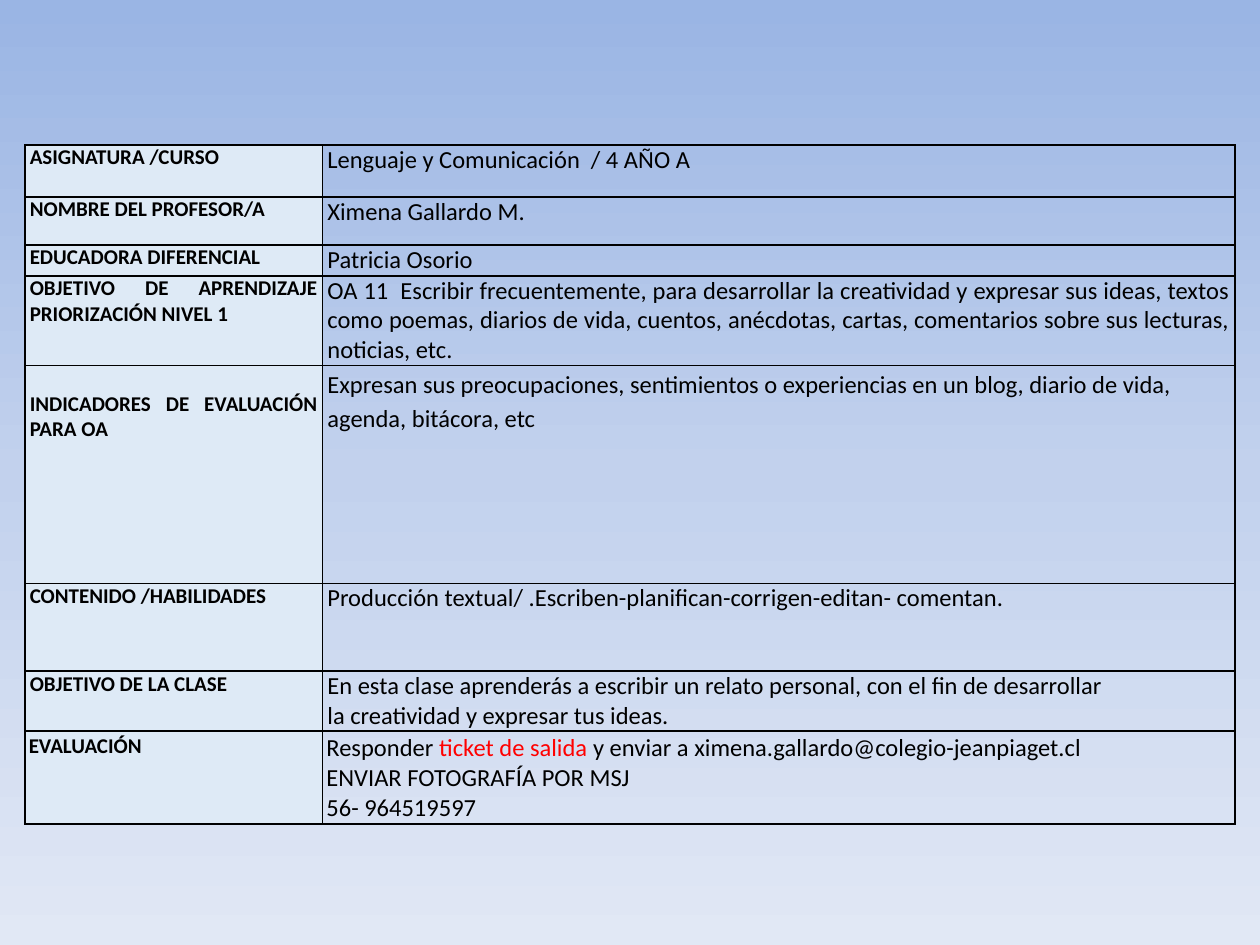
from lxml.etree import SubElement
from pptx import Presentation
from pptx.dml.color import RGBColor
from pptx.enum.text import PP_ALIGN
from pptx.oxml.ns import qn
from pptx.util import Cm, Pt

COLORS = {"text": "000000", "accent": "FF0000", "label": "DEEAF6", "border": "000000",
          "top": "9AB5E4", "middle": "C2D1ED", "bottom": "E1E8F5"}

COL_WIDTHS = [6.0, 18.4]

# Row height, label, paragraphs of the value (each a list of runs: text, color)
ROWS = [
    (1.05, "ASIGNATURA /CURSO", [[("Lenguaje y Comunicación  / 4 AÑO A", "text")]]),
    (0.97, "NOMBRE DEL PROFESOR/A", [[("Ximena Gallardo M.", "text")]]),
    (0.62, "EDUCADORA DIFERENCIAL", [[("Patricia Osorio", "text")]]),
    (1.81, "OBJETIVO DE APRENDIZAJE PRIORIZACIÓN NIVEL 1",
     [[("OA 11  Escribir frecuentemente, para desarrollar la creatividad y expresar sus ideas, "
        "textos como poemas, diarios de vida, cuentos, anécdotas, cartas, comentarios sobre "
        "sus lecturas, noticias, etc.", "text")]]),
    (4.39, "INDICADORES DE EVALUACIÓN PARA OA",
     [[("Expresan sus preocupaciones, sentimientos o experiencias en un blog, diario de vida, "
        "agenda, bitácora, etc", "text")]]),
    (1.77, "CONTENIDO /HABILIDADES",
     [[("Producción textual/ .Escriben-planifican-corrigen-editan- comentan.", "text")]]),
    (1.21, "OBJETIVO DE LA CLASE",
     [[("En esta clase aprenderás a escribir un relato personal, con el fin de desarrollar",
        "text")],
      [("la creatividad y expresar tus ideas.", "text")]]),
    (1.87, "EVALUACIÓN",
     [[("Responder ", "text"), ("ticket de salida ", "accent"),
       ("y enviar a ximena.gallardo@colegio-jeanpiaget.cl", "text")],
      [("ENVIAR FOTOGRAFÍA POR MSJ", "text")],
      [("56- 964519597", "text")]]),
]
INDICATORS, EVALUATION = 4, 7


class Deck:
    """Holds the text style and the current slide."""

    font = "Calibri"
    label_size = 12
    value_size = 14

    def __init__(self, prs):
        self.s = prs.slides.add_slide(prs.slide_layouts[6])

    def background(self, stops):
        fill = self.s.background.fill
        fill.gradient()
        fill.gradient_angle = 270
        gs_list = self.s.element.find(".//" + qn("a:gsLst"))
        gs_list.clear()
        for percent, color in stops:
            gs = SubElement(gs_list, qn("a:gs"), pos=str(percent * 1000))
            SubElement(gs, qn("a:srgbClr"), val=COLORS[color])

    def table(self, left, top, col_widths, row_heights):
        sp = self.s.shapes.add_table(len(row_heights), len(col_widths), Cm(left), Cm(top),
                                     Cm(sum(col_widths)), Cm(sum(row_heights)))
        table = sp.table
        table.first_row = table.horz_banding = False
        for column, width in zip(table.columns, col_widths):
            column.width = Cm(width)
        for row, height in zip(table.rows, row_heights):
            row.height = Cm(height)
        return table

    def borders(self, cell):
        tc_pr = cell._tc.get_or_add_tcPr()
        for side in ("lnL", "lnR", "lnT", "lnB"):
            ln = SubElement(tc_pr, qn("a:" + side), w=str(Pt(1)))
            SubElement(SubElement(ln, qn("a:solidFill")), qn("a:srgbClr"),
                       val=COLORS["border"])

    def cell(self, cell, paragraphs, size, bold=False, fill=None, side=0.1, top=0, spacing=None):
        self.borders(cell)
        if fill:
            cell.fill.solid()
            cell.fill.fore_color.rgb = RGBColor.from_string(COLORS[fill])
        else:
            cell.fill.background()
        cell.margin_left = cell.margin_right = Cm(side)
        cell.margin_top, cell.margin_bottom = Cm(top), Cm(0)
        tf = cell.text_frame
        for i, runs in enumerate(paragraphs):
            p = tf.add_paragraph() if i else tf.paragraphs[0]
            p.alignment = PP_ALIGN.LEFT if spacing else PP_ALIGN.JUSTIFY
            if spacing:
                p.line_spacing = spacing
            for text, color in runs:
                r = p.add_run()
                r.text = text
                r.font.name = self.font
                r.font.size = Pt(size)
                r.font.bold = bold
                r.font.color.rgb = RGBColor.from_string(COLORS[color])


def main():
    prs = Presentation()
    prs.slide_width, prs.slide_height = Cm(25.4), Cm(19.05)
    deck = Deck(prs)
    deck.background([(0, "top"), (50, "middle"), (100, "bottom")])
    table = deck.table(0.5, 2.92, COL_WIDTHS, [height for height, _, _ in ROWS])
    for i, (_, label, value) in enumerate(ROWS):
        side, top = (0.08, 0.05) if i == EVALUATION else (0.1, 0)
        deck.cell(table.cell(i, 0), [[(label, "text")]], deck.label_size, bold=True,
                  fill="label", side=side, top=0.52 if i == INDICATORS else top)
        deck.cell(table.cell(i, 1), value, deck.value_size, side=side, top=top,
                  spacing=1.15 if i == INDICATORS else None)
    prs.save("out.pptx")


if __name__ == "__main__":
    main()
